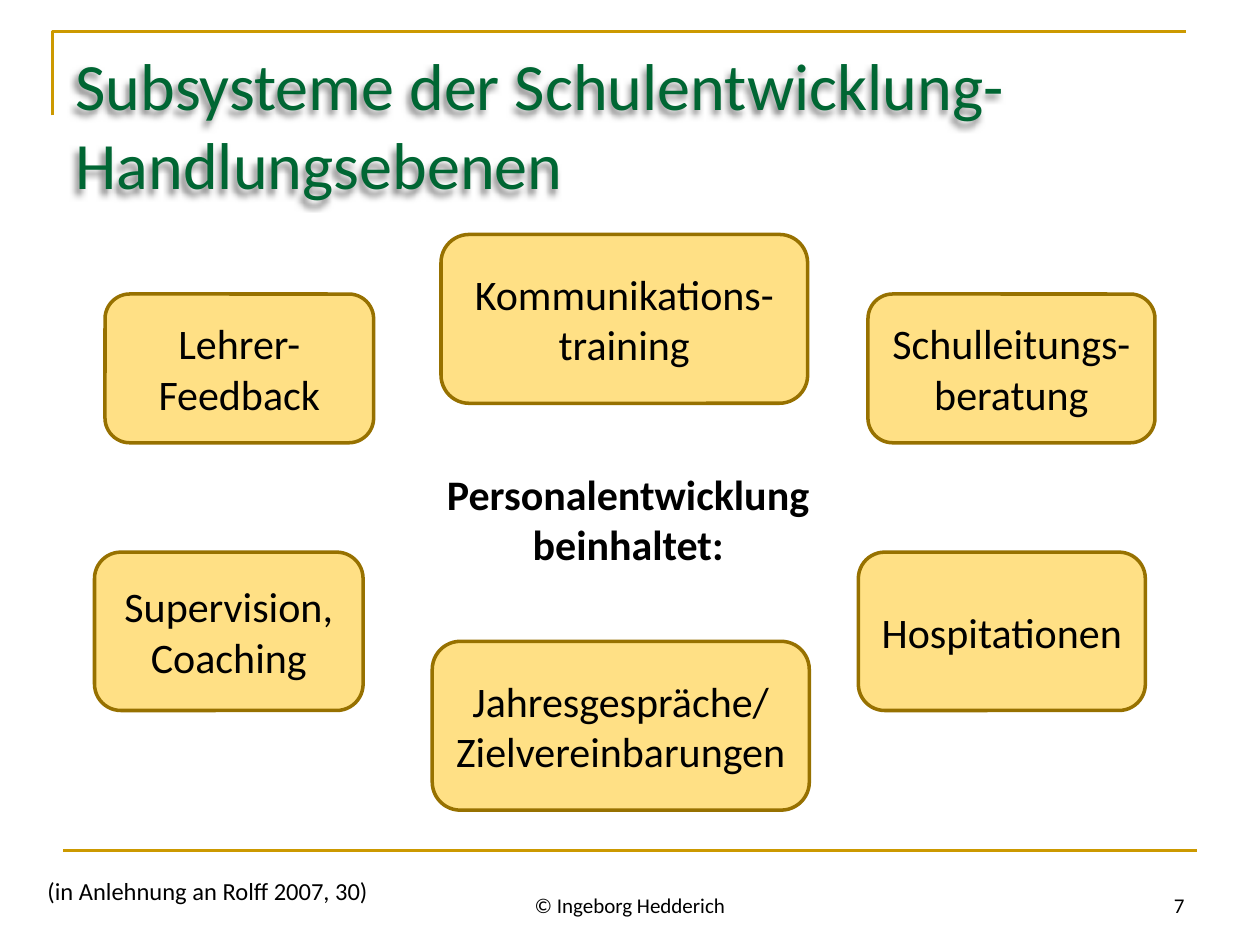
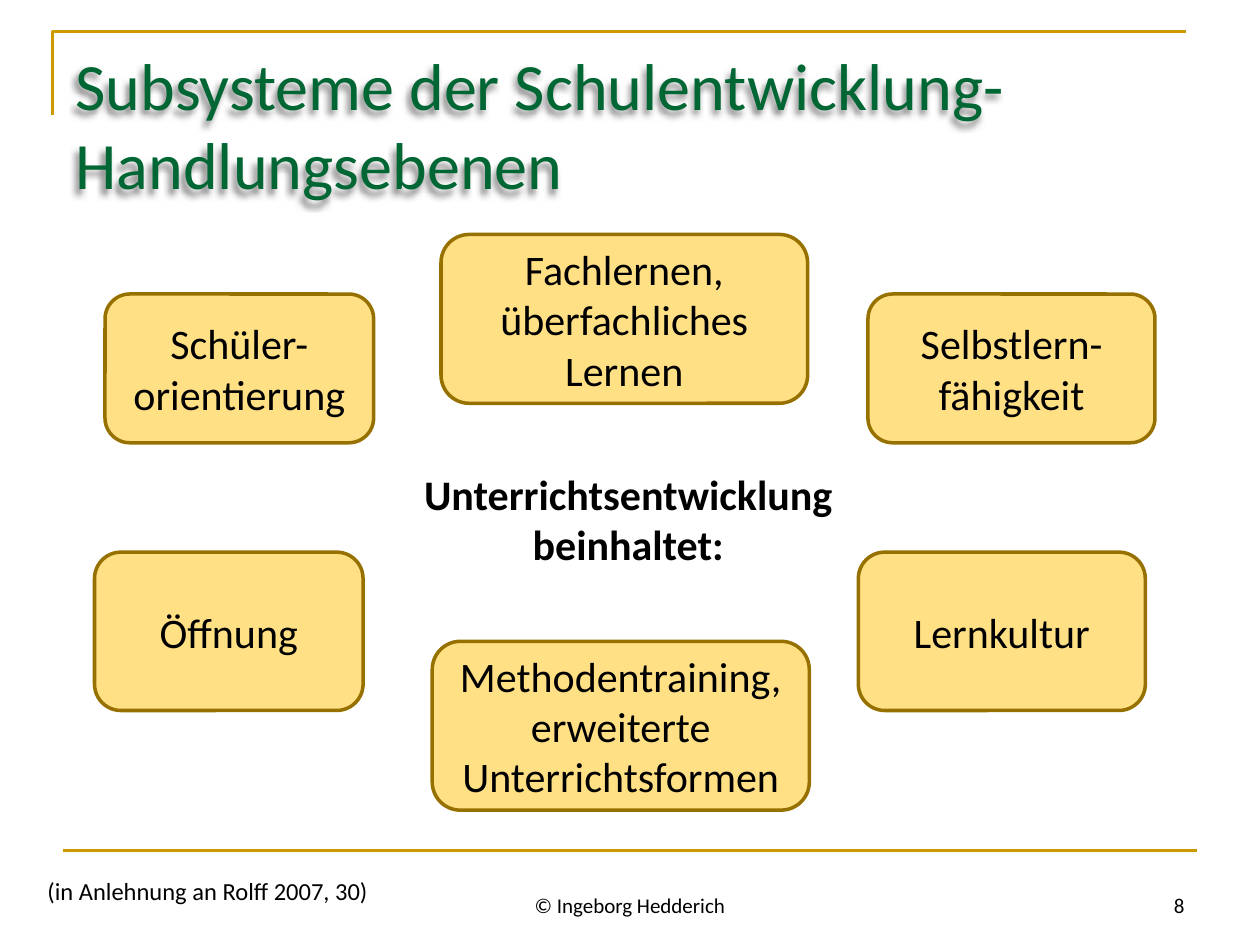
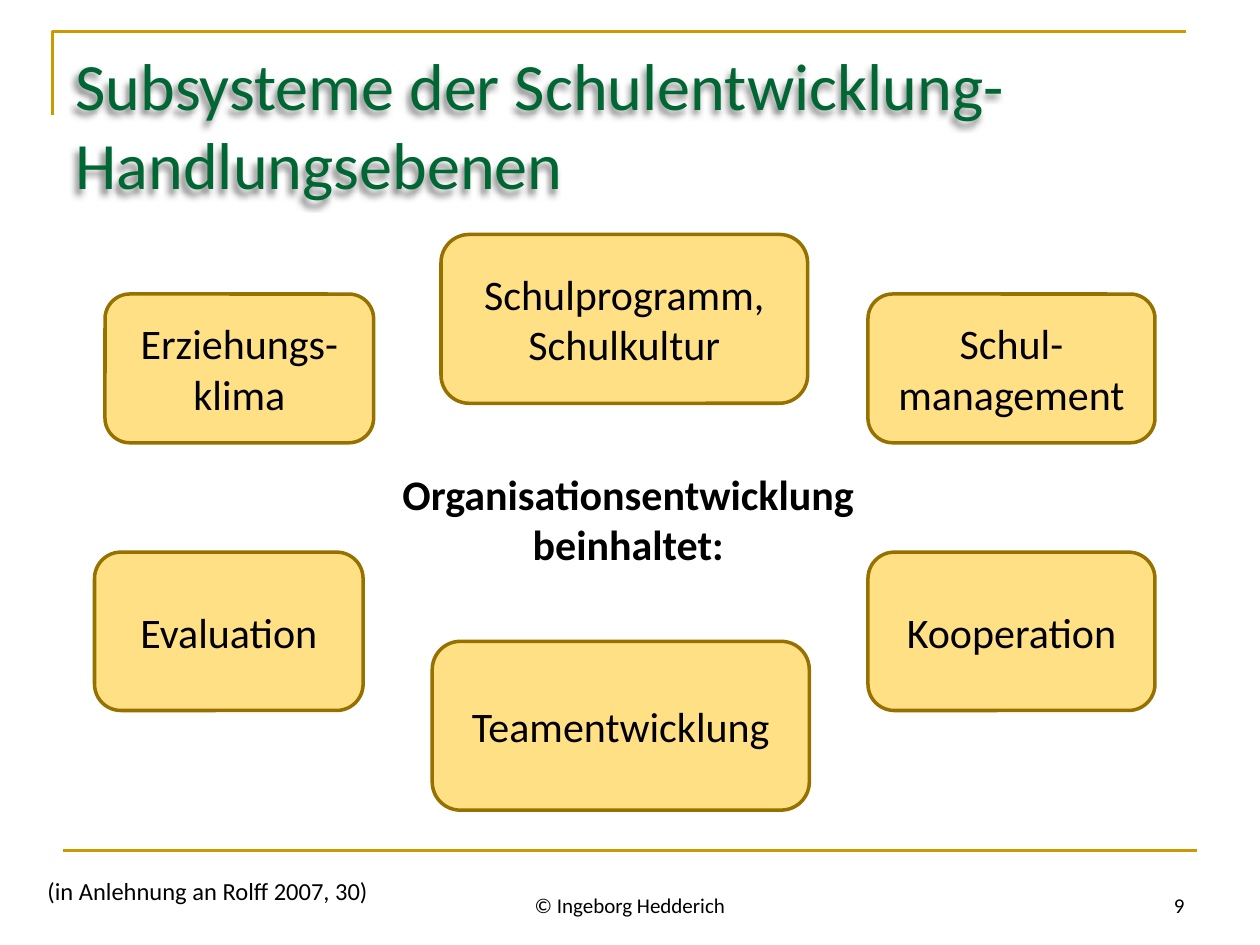
from collections import namedtuple

from lxml import etree
from pptx import Presentation
from pptx import util as u
from pptx.dml.color import RGBColor
from pptx.enum import shapes, text
from pptx.oxml import ns

GOLD = RGBColor(0xCC, 0x99, 0x00)
GREEN = RGBColor(0x00, 0x66, 0x33)
BLACK = RGBColor(0x00, 0x00, 0x00)
CREAM = RGBColor(0xFF, 0xE0, 0x85)
BRONZE = RGBColor(0x97, 0x71, 0x00)

Box = namedtuple("Box", "left top width height")
PAGE = Box(0, 0, 720, 540)
TITLE = Box(36, 21.6, 648, 90)
RING = Box(54, 134, 606, 329)
FOOTER = Box(20, 492, 664, 36)

ALIGN = text.PP_ALIGN
ANCHOR = text.MSO_ANCHOR
TITLE_FONT = {"name": "Calibri", "size": u.Pt(37.8)}
TOPIC_FONT = {"name": "Calibri", "size": u.Pt(24)}
HEADING_FONT = {**TOPIC_FONT, "bold": True}
SOURCE_FONT = {"name": "Calibri", "size": u.Pt(14)}
FOOTER_FONT = {"name": "Calibri", "size": u.Pt(12)}

TITLE_TEXT = "Subsysteme der Schulentwicklung- Handlungsebenen"
SOURCE_TEXT = "(in Anlehnung an Rolff 2007, 30)"
AUTHOR_TEXT = "© Ingeborg Hedderich"
FIRST_NUMBER = 7

TOPIC_PLACES = [
    Box(6, 34, 153.5, 85),
    Box(198, 0, 209.5, 96.5),
    Box(193, 232.5, 215.5, 96.5),
    Box(0, 181.5, 153.5, 90.5),
    Box(436.5, 181.5, 164, 90.5),
    Box(442, 34, 164, 85),
]

SLIDES = [
    {
        "heading": "Personalentwicklung\nbeinhaltet:",
        "heading_width": 224,
        "topics": [
            "Lehrer-Feedback",
            "Kommunikations-\ntraining",
            "Jahresgespräche/ Zielvereinbarungen",
            "Supervision, Coaching",
            "Hospitationen",
            "Schulleitungs-beratung",
        ],
    },
    {
        "heading": "Unterrichtsentwicklung\nbeinhaltet:",
        "heading_width": 250.5,
        "topics": [
            "Schüler-orientierung",
            "Fachlernen, überfachliches Lernen",
            "Methodentraining, erweiterte Unterrichtsformen",
            "Öffnung",
            "Lernkultur",
            "Selbstlern-fähigkeit",
        ],
    },
    {
        "heading": "Organisationsentwicklung\nbeinhaltet:",
        "heading_width": 276,
        "topics": [
            "Erziehungs-klima",
            "Schulprogramm, Schulkultur",
            "Teamentwicklung",
            "Evaluation",
            "Kooperation",
            "Schul-management",
        ],
        "lower_right_shift": 5.5,
    },
]


def within(outer, inner):
    return Box(outer.left + inner.left, outer.top + inner.top, inner.width, inner.height)


def lengths(box):
    return [u.Pt(value) for value in box]


def write(frame, wording, font, color=BLACK, align=ALIGN.LEFT, **layout):
    for name, value in {"word_wrap": True, **layout}.items():
        setattr(frame, name, value)
    frame.text = wording
    for paragraph in frame.paragraphs:
        paragraph.alignment = align
        for name, value in font.items():
            setattr(paragraph.font, name, value)
        paragraph.font.color.rgb = color


def set_line(part, color, width):
    part.line.color.rgb = color
    part.line.width = u.Pt(width)


def add_effects(part):
    return etree.SubElement(part._element.spPr, ns.qn("a:effectLst"))


def add_label(slide, box, wording, font, **layout):
    label = slide.shapes.add_textbox(*lengths(box))
    write(label.text_frame, wording, font, **layout)


def add_frame(slide, box):
    left, top = box.left + 30, box.top + 18
    pen = slide.shapes.build_freeform(u.Pt(left), u.Pt(top + 48))
    corners = [(left, top), (left + 648, top)]
    pen.add_line_segments([(u.Pt(x), u.Pt(y)) for x, y in corners], close=False)
    corner = pen.convert_to_shape()
    corner.fill.background()
    corner.shadow.inherit = False
    set_line(corner, GOLD, 1.5)

    rule_y = u.Pt(box.top + 486)
    rule = slide.shapes.add_connector(
        shapes.MSO_CONNECTOR.STRAIGHT,
        u.Pt(box.left + 36), rule_y, u.Pt(box.left + box.width - 36), rule_y,
    )
    set_line(rule, GOLD, 1.5)
    add_effects(rule)


def add_title(slide, box):
    title = slide.shapes.title
    title.left, title.top, title.width, title.height = lengths(box)
    write(title.text_frame, TITLE_TEXT, TITLE_FONT, GREEN,
          vertical_anchor=ANCHOR.TOP, auto_size=text.MSO_AUTO_SIZE.NONE)
    shadow = etree.SubElement(
        add_effects(title), ns.qn("a:outerShdw"),
        blurRad=str(u.Pt(4)), dist=str(u.Pt(4)), dir="8100000", algn="tr", rotWithShape="0",
    )
    shade = etree.SubElement(shadow, ns.qn("a:srgbClr"), val="000000")
    etree.SubElement(shade, ns.qn("a:alpha"), val="50000")


def add_footer(slide, box, number):
    add_label(slide, within(box, Box(226, 0, 228, 36)), AUTHOR_TEXT, FOOTER_FONT,
              align=ALIGN.CENTER, vertical_anchor=ANCHOR.BOTTOM)
    add_label(slide, within(box, Box(496, 0, 168, 36)), str(number), FOOTER_FONT,
              align=ALIGN.RIGHT, vertical_anchor=ANCHOR.BOTTOM)
    add_label(slide, within(box, Box(0, 5, 199.5, 24.5)), SOURCE_TEXT, SOURCE_FONT,
              word_wrap=False)


def add_topic(slide, box, wording):
    topic = slide.shapes.add_shape(shapes.MSO_SHAPE.ROUNDED_RECTANGLE, *lengths(box))
    topic.shadow.inherit = False
    topic.fill.solid()
    topic.fill.fore_color.rgb = CREAM
    set_line(topic, BRONZE, 2)
    write(topic.text_frame, wording, TOPIC_FONT,
          align=ALIGN.CENTER, vertical_anchor=ANCHOR.MIDDLE)


def add_ring(slide, box, heading, heading_width, topics, lower_right_shift=0):
    heading_box = Box(305 - heading_width / 2, 130, heading_width, 65.5)
    add_label(slide, within(box, heading_box), heading, HEADING_FONT,
              align=ALIGN.CENTER, word_wrap=False)
    places = list(TOPIC_PLACES)
    places[4] = places[4]._replace(left=places[4].left + lower_right_shift)
    for place, wording in zip(places, topics):
        add_topic(slide, within(box, place), wording)


def main():
    deck = Presentation()
    deck.slide_width, deck.slide_height = u.Pt(PAGE.width), u.Pt(PAGE.height)
    for number, content in enumerate(SLIDES, FIRST_NUMBER):
        slide = deck.slides.add_slide(deck.slide_layouts[5])
        add_frame(slide, PAGE)
        add_title(slide, TITLE)
        add_footer(slide, FOOTER, number)
        add_ring(slide, RING, **content)
    deck.save("out.pptx")


if __name__ == "__main__":
    main()
